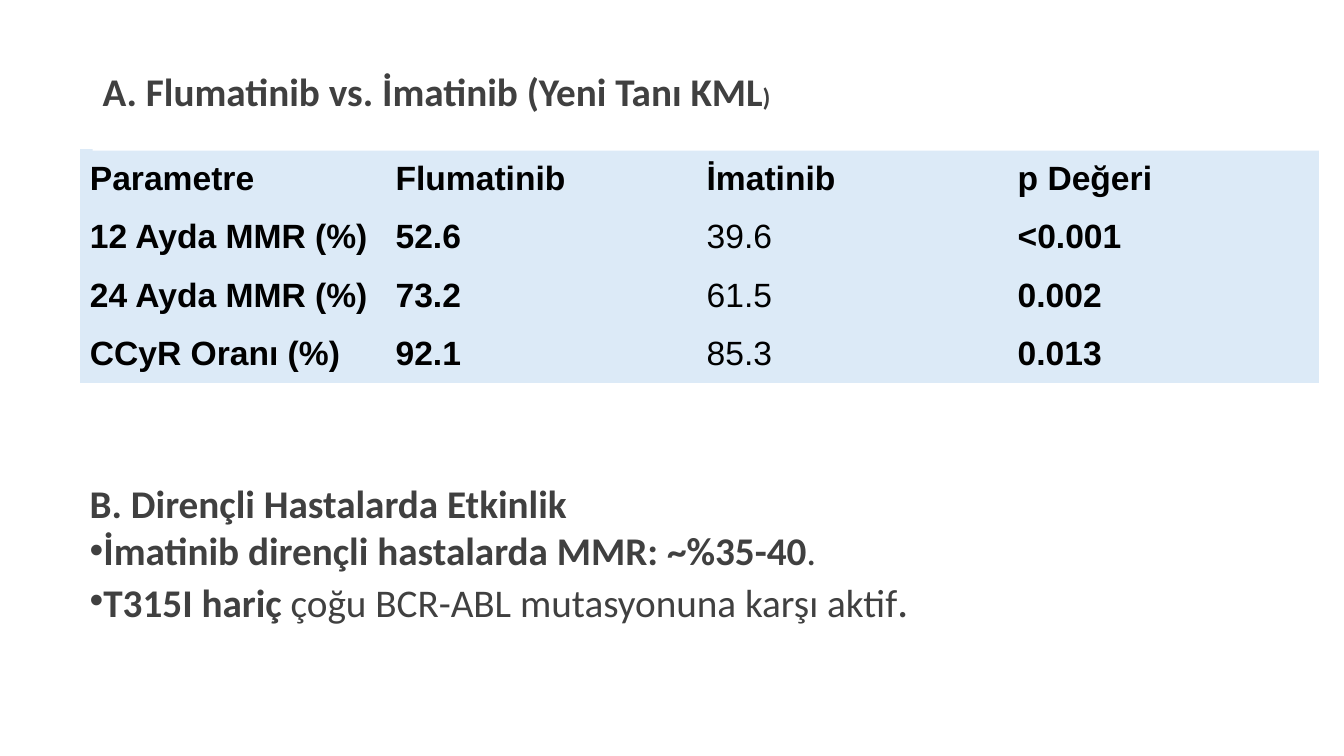
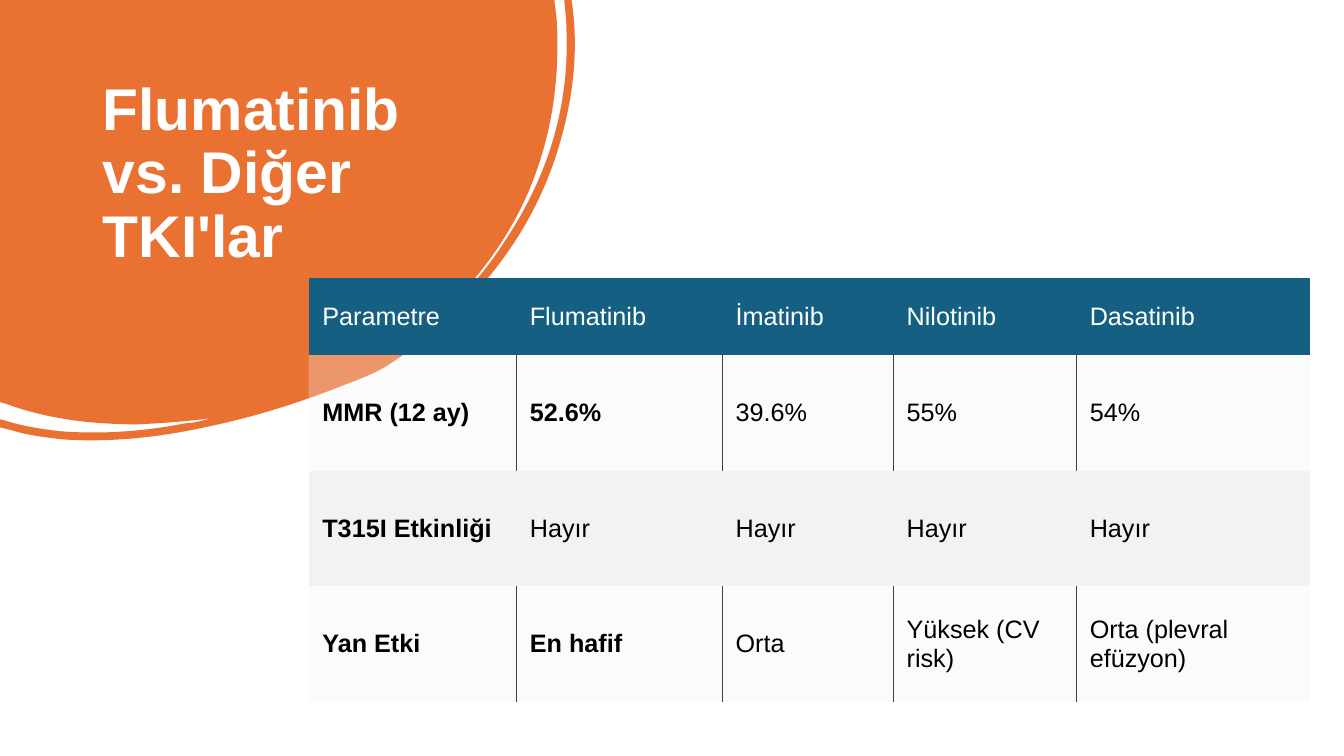
import pptx
import pptx.util
import pptx.dml.color
import pptx.enum.text
from lxml import etree
from pptx.oxml.ns import qn

Pt = pptx.util.Pt
MSO_ANCHOR = pptx.enum.text.MSO_ANCHOR
COLORS = {"black": "000000", "white": "FFFFFF", "gray": "404040", "pale_blue": "DCEAF7",
          "teal": "156082", "light": "F2F2F2", "orange": "E97132"}
NO_STYLE = "{2D5ABB26-0587-4C30-8999-92F81FD0307C}"

# Runs are (text, size, bold)
EFFICACY_TITLE = [("A. Flumatinib vs. İmatinib (Yeni Tanı KML", 28, True), (")", 18, True)]
EFFICACY_ROWS = [
    ["Parametre", "Flumatinib", "İmatinib", "p Değeri"],
    ["12 Ayda MMR (%)", "52.6", "39.6", "<0.001"],
    ["24 Ayda MMR (%)", "73.2", "61.5", "0.002"],
    ["CCyR Oranı (%)", "92.1", "85.3", "0.013"],
]
RESISTANCE = [
    [("B. Dirençli Hastalarda Etkinlik", 28, True)],
    [("İmatinib dirençli hastalarda MMR: ~%35-40", 28, True), (".", 28, False)],
    [("T315I hariç", 28, True), (" çoğu BCR-ABL mutasyonuna karşı aktif", 28, False),
     (".", 32, False)],
]

COMPARISON_TITLE = [("Flumatinib vs. Diğer TKI'lar", 42, True)]
COMPARISON_ROWS = [
    ["Parametre", "Flumatinib", "İmatinib", "Nilotinib", "Dasatinib"],
    ["MMR (12 ay)", "52.6%", "39.6%", "55%", "54%"],
    ["T315I Etkinliği", "Hayır", "Hayır", "Hayır", "Hayır"],
    ["Yan Etki", "En hafif", "Orta", "Yüksek (CV risk)", "Orta (plevral efüzyon)"],
]
COMPARISON_BOLD = {(1, 0), (1, 1), (2, 0), (3, 0), (3, 1)}

# Outline in units of 0.72 pt: a pair is a line, six numbers are a cubic curve
BLOB_UNIT = Pt(0.72)
BLOB = [
    (0, 0), (550, 0), (552, 17), (553, 26, 553, 36, 553, 45), (553, 101, 542, 154, 518, 204),
    (496, 249, 465, 288, 427, 321), (429, 321, 430, 319, 432, 318),
    (459, 295, 482, 269, 501, 239), (543, 176, 565, 107, 562, 30),
    (562, 21, 561, 12, 560, 3), (560, 0), (567, 0), (568, 7),
    (574, 54, 568, 102, 553, 150), (533, 214, 497, 268, 448, 314),
    (439, 323, 429, 331, 419, 338), (409, 346, 399, 353, 387, 361),
    (375, 369, 360, 375, 344, 381), (299, 399, 252, 414, 203, 424),
    (157, 434, 110, 439, 63, 436), (45, 434, 28, 432, 12, 427), (0, 424), (0, 416), (4, 417),
    (23, 423, 42, 426, 61, 428), (103, 431, 143, 428, 184, 420),
    (189, 420, 193, 419, 198, 418), (202, 417, 206, 416, 210, 415),
    (186, 418, 161, 420, 136, 421), (92, 421, 48, 416, 7, 401), (0, 399),
]


def rgb(name):
    return pptx.dml.color.RGBColor.from_string(COLORS[name])


def style(run, size, bold, color, font):
    run.font.size, run.font.bold, run.font.name = Pt(size), bold, font
    run.font.color.rgb = rgb(color)


def add_runs(p, runs, color, font):
    for text, size, bold in runs:
        r = p.add_run()
        r.text = text
        style(r, size, bold, color, font)


def add_titled_slide(prs, runs, box, color, font, line_spacing):
    s = prs.slides.add_slide(prs.slide_layouts[5])
    title = s.shapes.title
    title.left, title.top, title.width, title.height = map(Pt, box)
    tf = title.text_frame
    tf.auto_size = pptx.enum.text.MSO_AUTO_SIZE.NONE
    tf.vertical_anchor = MSO_ANCHOR.TOP
    p = tf.paragraphs[0]
    p.alignment = pptx.enum.text.PP_ALIGN.LEFT
    p.line_spacing = line_spacing
    add_runs(p, runs, color, font)
    return s


def send_to_back(s, shape):
    s.shapes._spTree.insert(2, shape._element)


def add_grid(s, rows, left, top, widths, heights, margins, size, look):
    """Add a table; look(row, column) gives fill, text colour and boldness."""
    frame = s.shapes.add_table(len(rows), len(widths), Pt(left), Pt(top),
                               Pt(sum(widths)), Pt(sum(heights)))
    table = frame.table
    table._tbl.tblPr.find(qn("a:tableStyleId")).text = NO_STYLE
    table.horz_banding = False
    for column, width in zip(table.columns, widths):
        column.width = Pt(width)
    for row, height in zip(table.rows, heights):
        row.height = Pt(height)
    for i, texts in enumerate(rows):
        for j, text in enumerate(texts):
            cell = table.cell(i, j)
            fill, color, bold = look(i, j)
            cell.fill.solid()
            cell.fill.fore_color.rgb = rgb(fill)
            cell.vertical_anchor = MSO_ANCHOR.MIDDLE
            (cell.margin_left, cell.margin_top,
             cell.margin_right, cell.margin_bottom) = map(Pt, margins)
            cell.text_frame.text = text
            style(cell.text_frame.paragraphs[0].runs[0], size, bold, color, "Arial")
    return frame


def set_fill_alpha(cell, percent):
    color = cell._tc.tcPr.find(qn("a:solidFill"))[0]
    etree.SubElement(color, qn("a:alpha"), val=str(percent * 1000))


def add_side_borders(cell, sides):
    for k, side in enumerate(sides):
        ln = etree.Element(qn("a:ln" + side), w=str(Pt(0.5)))
        fill = etree.SubElement(ln, qn("a:solidFill"))
        etree.SubElement(fill, qn("a:srgbClr"), val=COLORS["gray"])
        cell._tc.tcPr.insert(k, ln)


def add_blob(s):
    builder = s.shapes.build_freeform(*BLOB[0], scale=BLOB_UNIT)
    builder.add_line_segments([seg[-2:] for seg in BLOB[1:]], close=False)
    sp = builder.convert_to_shape()
    outline = next(sp._element.iter(qn("a:path")))
    for seg, line in zip(BLOB[1:], outline.findall(qn("a:lnTo"))):
        if len(seg) == 6:
            curve = etree.Element(qn("a:cubicBezTo"))
            for x, y in zip(seg[::2], seg[1::2]):
                etree.SubElement(curve, qn("a:pt"), x=str(x), y=str(y))
            outline.replace(line, curve)
    etree.SubElement(outline, qn("a:close"))
    sp.shadow.inherit = False
    sp.fill.solid()
    sp.fill.fore_color.rgb = rgb("orange")
    sp.line.fill.background()
    send_to_back(s, sp)


def build_efficacy(prs):
    s = add_titled_slide(prs, EFFICACY_TITLE, (66.2, 44.2, 950.4, 63.4), "gray", "Calibri", 1.0)
    s.shapes.title.fill.solid()
    s.shapes.title.fill.fore_color.rgb = rgb("white")
    frame = add_grid(s, EFFICACY_ROWS, 57, 106.7, [218.4] + [222.2] * 3, [41.7] * 4,
                     [7.2] * 4, 24,
                     lambda i, j: ("pale_blue", "black", i == 0 or j != 2))
    send_to_back(s, frame)
    tf = s.shapes.add_textbox(Pt(57), Pt(338.6), Pt(810), Pt(114)).text_frame
    tf.word_wrap = True
    for i, runs in enumerate(RESISTANCE):
        p = tf.add_paragraph() if i else tf.paragraphs[0]
        if i:
            pPr = p._p.get_or_add_pPr()
            etree.SubElement(pPr, qn("a:buFont"), typeface="Arial")
            etree.SubElement(pPr, qn("a:buChar"), char="•")
        add_runs(p, runs, "gray", "Calibri")


def build_comparison(prs):
    s = add_titled_slide(prs, COMPARISON_TITLE, (66.2, 53.3, 253.4, 159.8), "white", "Arial", 0.9)
    add_blob(s)
    table = add_grid(
        s, COMPARISON_ROWS, 220.5, 198.7, [148.2, 147, 122.2, 130.8, 167], [55] + [82.6] * 3,
        [9.8, 7.2, 7.8, 7.2], 18,
        lambda i, j: ("light" if i else "teal", "black" if i else "white",
                      (i, j) in COMPARISON_BOLD)).table
    last = len(table.columns) - 1
    for i in (1, 3):
        for j in range(last + 1):
            cell = table.cell(i, j)
            set_fill_alpha(cell, 30)
            add_side_borders(cell, ["L"] * (j > 0) + ["R"] * (j < last))


def main():
    prs = pptx.Presentation()
    prs.slide_width, prs.slide_height = Pt(960), Pt(540)
    build_efficacy(prs)
    build_comparison(prs)
    prs.save("out.pptx")


if __name__ == "__main__":
    main()
